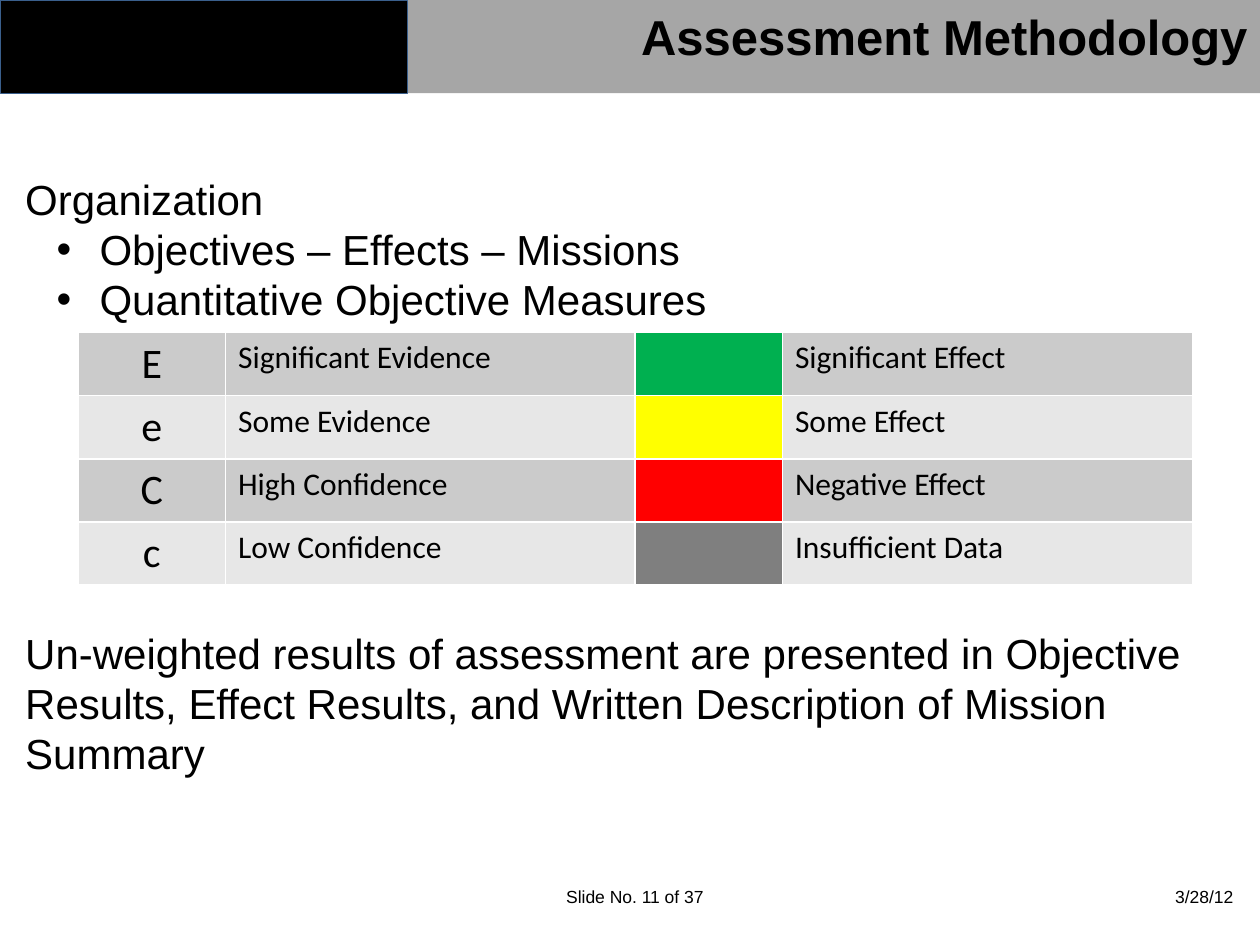
from lxml.etree import SubElement
from pptx import Presentation
from pptx.dml.color import RGBColor
from pptx.enum.shapes import MSO_SHAPE
from pptx.enum.text import MSO_ANCHOR, MSO_AUTO_SIZE, PP_ALIGN
from pptx.oxml.ns import qn
from pptx.util import Inches, Pt

BLACK = RGBColor(0x00, 0x00, 0x00)
HEADER_GRAY = RGBColor(0xA6, 0xA6, 0xA6)
HEADER_EDGE = RGBColor(0x3A, 0x5F, 0x8C)
DARK_BAND = RGBColor(0xCB, 0xCB, 0xCB)
LIGHT_BAND = RGBColor(0xE7, 0xE7, 0xE7)
GREEN = RGBColor(0x00, 0xB0, 0x50)
YELLOW = RGBColor(0xFF, 0xFF, 0x00)
RED = RGBColor(0xFF, 0x00, 0x00)
GRAY = RGBColor(0x7F, 0x7F, 0x7F)

EVIDENCE = [("E", "Significant Evidence"), ("e", "Some Evidence"),
            ("C", "High Confidence"), ("c", "Low Confidence")]
EFFECTS = [(GREEN, "Significant Effect"), (YELLOW, "Some Effect"),
           (RED, "Negative Effect"), (GRAY, "Insufficient Data")]
SUMMARY = ("Un-weighted results of assessment are presented in Objective Results, "
           "Effect Results, and Written Description of Mission Summary")


class SlideBuilder:
    """Draws styled elements on a grid of 100 columns by 75 rows."""

    heading_font = "Arial"
    table_font = "Calibri"
    line_height = Pt(28.6)

    def __init__(self, deck):
        self.column = deck.slide_width / 100
        self.row = deck.slide_height / 75
        self.slide = deck.slides.add_slide(deck.slide_layouts[1])

    def box(self, left, top, width, height):
        return (round(left * self.column), round(top * self.row),
                round(width * self.column), round(height * self.row))

    def move(self, placeholder, *place):
        (placeholder.left, placeholder.top,
         placeholder.width, placeholder.height) = self.box(*place)
        placeholder.text_frame.auto_size = MSO_AUTO_SIZE.NONE

    def style(self, paragraph, size, font, bold=False):
        paragraph.font.name = font
        paragraph.font.size = Pt(size)
        paragraph.font.bold = bold
        paragraph.font.color.rgb = BLACK

    def bar(self, fill, edge, *place):
        bar = self.slide.shapes.add_shape(MSO_SHAPE.RECTANGLE, *self.box(*place))
        bar.shadow.inherit = False
        bar.fill.solid()
        bar.fill.fore_color.rgb = fill
        if edge is None:
            bar.line.fill.background()
        else:
            bar.line.color.rgb = edge
            bar.line.width = Pt(0.25)

    def title(self, text, *place):
        title = self.slide.shapes.title
        self.move(title, *place)
        title.element.getparent().append(title.element)
        title.text_frame.vertical_anchor = MSO_ANCHOR.MIDDLE
        heading = title.text_frame.paragraphs[0]
        heading.text = text
        heading.alignment = PP_ALIGN.RIGHT
        self.style(heading, 28, self.heading_font, bold=True)

    def body(self, items, *place):
        body = self.slide.placeholders[1]
        self.move(body, *place)
        frame = body.text_frame
        for index, (text, bulleted, gap) in enumerate(items):
            item = frame.add_paragraph() if index else frame.paragraphs[0]
            item.text = text
            item.level = int(bulleted)
            props = item._p.get_or_add_pPr()
            props.set("marL", str(Inches(0.59) if bulleted else 0))
            props.set("indent", str(Inches(-0.34) if bulleted else 0))
            if bulleted:
                SubElement(props, qn("a:buFont"), typeface=self.heading_font)
                SubElement(props, qn("a:buChar"), char="•")
            else:
                SubElement(props, qn("a:buNone"))
            item.line_spacing = self.line_height
            item.space_before = Pt(gap)
            self.style(item, 24, self.heading_font)

    def legend(self, entries, *place):
        grid = self.slide.shapes.add_table(len(entries), 2, *self.box(*place)).table
        grid.first_row = grid.horz_banding = False
        grid.columns[0].width = round(11.7 * self.column)
        grid.columns[1].width = round(32.6 * self.column)
        for index, (key, meaning) in enumerate(entries):
            band = LIGHT_BAND if index % 2 else DARK_BAND
            is_color = isinstance(key, RGBColor)
            self.cell(grid.cell(index, 0), "" if is_color else key, 24,
                      key if is_color else band, PP_ALIGN.CENTER)
            self.cell(grid.cell(index, 1), meaning, 18, band, PP_ALIGN.LEFT)

    def cell(self, cell, text, size, fill, alignment):
        cell.fill.solid()
        cell.fill.fore_color.rgb = fill
        entry = cell.text_frame.paragraphs[0]
        entry.text = text
        entry.alignment = alignment
        self.style(entry, size, self.table_font)

    def footer(self, page, date, *place):
        frame = self.slide.shapes.add_textbox(*self.box(*place)).text_frame
        frame.word_wrap = True
        frame.margin_top = Inches(0.11)
        line = frame.paragraphs[0]
        line.text = f"\t{page}\t{date}"
        stops = SubElement(line._p.get_or_add_pPr(), qn("a:tabLst"))
        for position, alignment in ((4.94, "ctr"), (9.69, "r")):
            SubElement(stops, qn("a:tab"), pos=str(Inches(position)), algn=alignment)
        self.style(line, 10, self.heading_font)


def main():
    deck = Presentation()
    deck.slide_width, deck.slide_height = Inches(10), Inches(7.5)
    page = SlideBuilder(deck)
    page.bar(BLACK, HEADER_EDGE, 0, 0, 32.3, 7.4)
    page.bar(HEADER_GRAY, None, 32.4, 0, 67.6, 7.4)
    page.footer("Slide No. 11 of 37", "3/28/12", 0, 69.2, 100, 5.8)
    page.body([("Organization", False, 0),
               ("Objectives – Effects – Missions", True, 0),
               ("Quantitative Objective Measures", True, 0),
               (SUMMARY, False, 173.5)], 1, 13.3, 96.1, 60.9)
    page.legend(EVIDENCE, 6.2, 26.4, 44.3, 20)
    page.legend(EFFECTS, 50.4, 26.4, 44.3, 20)
    page.title("Assessment Methodology", 28.7, 0, 71.3, 5.7)
    deck.save("out.pptx")


if __name__ == "__main__":
    main()
